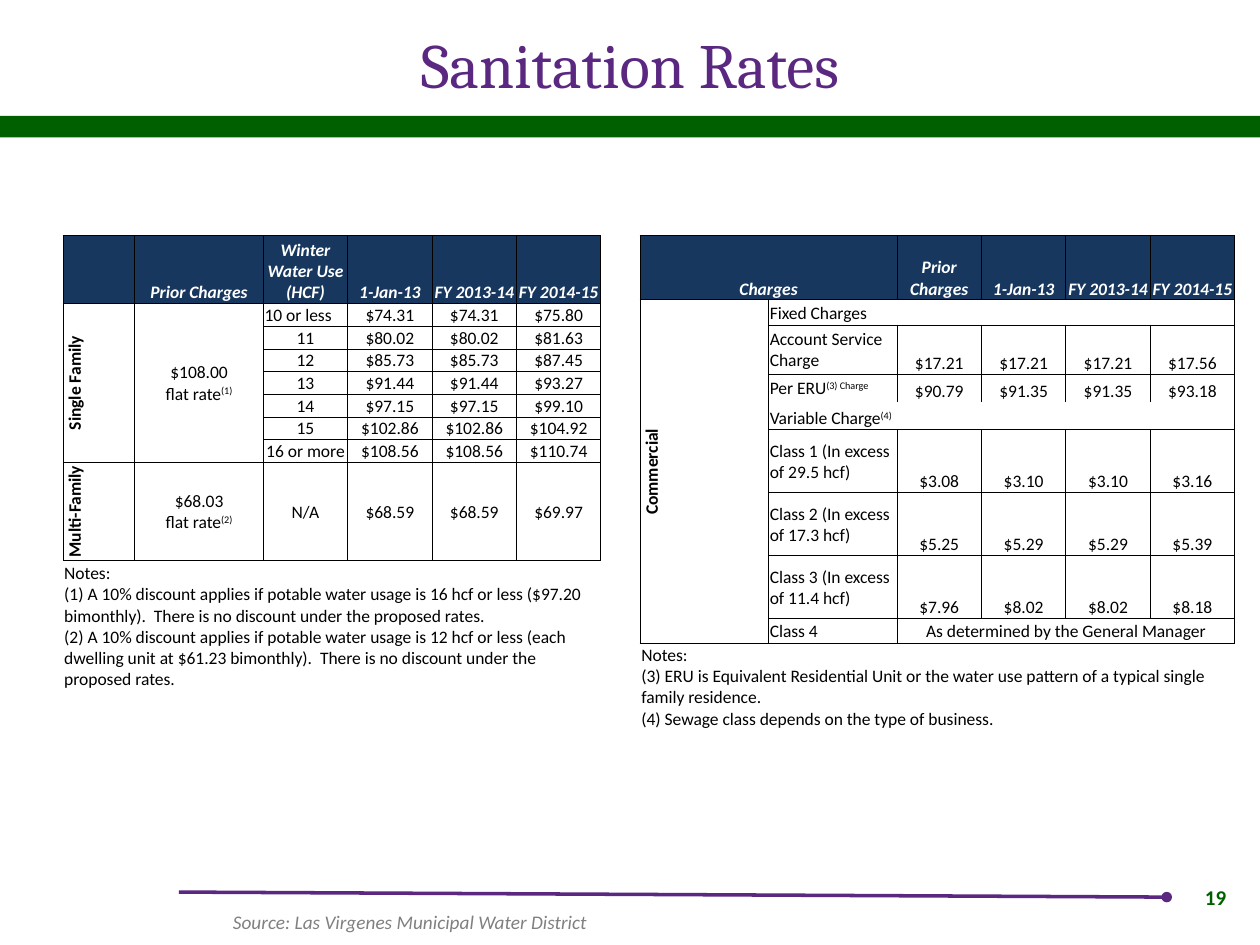
from lxml.etree import SubElement
from pptx import Presentation
from pptx.dml.color import RGBColor
from pptx.enum.shapes import MSO_CONNECTOR as Connector, MSO_SHAPE as Shape
from pptx.enum.text import MSO_ANCHOR as Anchor, PP_ALIGN as Align
from pptx.oxml.ns import qn
from pptx.util import Inches, Pt

COLORS = {"purple": "5A2781", "green": "006000", "navy": "17375E",
          "white": "FFFFFF", "black": "000000", "gray": "808080"}

TITLE = "Sanitation Rates"
SOURCE = "Source: Las Virgenes Municipal Water District"
PAGE = "19"
PERIODS = ["1-Jan-13", "FY 2013-14", "FY 2014-15"]

RESIDENTIAL = {
    "left": 0.5,
    "columns": [0.57, 1.02] + [0.67] * 4,
    "heights": [0.54] + [0.18] * 7 + [0.78, 1.03],
    "rows": [
        ["", "Prior Charges", "Winter Water Use (HCF)", *PERIODS],
        ["Single Family", "$108.00\nflat rate^(1)", "10 or less", "$74.31", "$74.31", "$75.80"],
        ["", "", "11", "$80.02", "$80.02", "$81.63"],
        ["", "", "12", "$85.73", "$85.73", "$87.45"],
        ["", "", "13", "$91.44", "$91.44", "$93.27"],
        ["", "", "14", "$97.15", "$97.15", "$99.10"],
        ["", "", "15", "$102.86", "$102.86", "$104.92"],
        ["", "", "16 or more", "$108.56", "$108.56", "$110.74"],
        ["Multi-Family", "$68.03\nflat rate^(2)", "N/A", "$68.59", "$68.59", "$69.97"],
        ["Notes:\n(1) A 10% discount applies if potable water usage is 16 hcf or less ($97.20 "
         "bimonthly).  There is no discount under the proposed rates.\n"
         "(2) A 10% discount applies if potable water usage is 12 hcf or less (each dwelling "
         "unit at $61.23 bimonthly).  There is no discount under the proposed rates."],
    ],
    "merges": [(1, 0, 7, 0), (1, 1, 7, 1), (9, 0, 9, 5)],
    "left_aligned": [(1, 2), (9, 0)],
    "low": [],
    "open_below": None,
}

COMMERCIAL = {
    "left": 5.08,
    "columns": [1.02] * 2 + [0.67] * 4,
    "heights": [0.51, 0.2, 0.39, 0.22, 0.22] + [0.5] * 3 + [0.2, 0.66],
    "rows": [
        ["Charges", "", "Prior Charges", *PERIODS],
        ["Commercial", "Fixed Charges"],
        ["", "Account Service Charge", "$17.21", "$17.21", "$17.21", "$17.56"],
        ["", "Per ERU^(3) Charge", "$90.79", "$91.35", "$91.35", "$93.18"],
        ["", "Variable Charge^(4)"],
        ["", "Class 1 (In excess of 29.5 hcf)", "$3.08", "$3.10", "$3.10", "$3.16"],
        ["", "Class 2 (In excess of 17.3 hcf)", "$5.25", "$5.29", "$5.29", "$5.39"],
        ["", "Class 3 (In excess of 11.4 hcf)", "$7.96", "$8.02", "$8.02", "$8.18"],
        ["", "Class 4", "As determined by the General Manager"],
        ["Notes:\n(3) ERU is Equivalent Residential Unit or the water use pattern of a typical "
         "single family residence.\n(4) Sewage class depends on the type of business."],
    ],
    "merges": [(0, 0, 0, 1), (1, 0, 8, 0), (1, 1, 1, 5), (4, 1, 4, 5), (8, 2, 8, 5), (9, 0, 9, 5)],
    "left_aligned": [(row, 1) for row in range(1, 9)] + [(9, 0)],
    "low": [(4, 1)],
    "open_below": 3,
}


def rgb(name):
    return RGBColor.from_string(COLORS[name])


def style(paragraph, size, color, align=Align.LEFT, face="Calibri", bold=False, italic=False):
    paragraph.alignment = align
    font = paragraph.font
    font.name, font.size, font.bold, font.italic = face, Pt(size), bold, italic
    font.color.rgb = rgb(color)


def draw_borders(cell, visible):
    properties = cell._tc.get_or_add_tcPr()
    for side in "LRTB":
        line = SubElement(properties, qn(f"a:ln{side}"), w=str(Pt(0.5)))
        if side in visible:
            fill = SubElement(line, qn("a:solidFill"))
            SubElement(fill, qn("a:srgbClr"), val=COLORS["black"])
        else:
            SubElement(line, qn("a:noFill"))


def fill_cell(cell, content, row, column, rates):
    header, notes = row == 0, row == len(rates["rows"]) - 1
    group = column == 0 and not header and not notes
    open_row = rates["open_below"]
    visible = "T" if notes else "LRTB"
    if open_row and column > 0:
        visible = {open_row: "LRT", open_row + 1: "LRB"}.get(row, visible)
    draw_borders(cell, visible)
    if header:
        cell.fill.solid()
        cell.fill.fore_color.rgb = rgb("navy")
    else:
        cell.fill.background()
    cell.margin_left = cell.margin_right = cell.margin_top = Inches(0.01)
    cell.margin_bottom = 0
    centered = not header and not notes and (column < 2 or row == 8)
    low = (row, column) in rates["low"]
    cell.vertical_anchor = Anchor.MIDDLE if centered and not low else Anchor.BOTTOM
    if group:
        cell._tc.get_or_add_tcPr().set("vert", "vert270")

    body, _, superscript = content.partition("^")
    paragraph = cell.text_frame.paragraphs[0]
    paragraph.text = body.replace("\n", "\v")
    if superscript:
        run = paragraph.add_run()
        run.text = superscript
        run._r.get_or_add_rPr().set("baseline", "30000")
    align = Align.LEFT if (row, column) in rates["left_aligned"] else Align.CENTER
    style(paragraph, 10, "white" if header else "black", align,
          bold=header or group, italic=header)


def add_rates(slide, rates):
    columns, heights = rates["columns"], rates["heights"]
    table = slide.shapes.add_table(
        len(heights), len(columns), Inches(rates["left"]), Inches(1.87),
        Inches(sum(columns)), Inches(sum(heights))).table
    table.first_row = table.horz_banding = False
    for column, width in zip(table.columns, columns):
        column.width = Inches(width)
    for row, height in zip(table.rows, heights):
        row.height = Inches(height)
    for top, left, bottom, right in rates["merges"]:
        table.cell(top, left).merge(table.cell(bottom, right))
    for row, contents in enumerate(rates["rows"]):
        padded = contents + [""] * (len(columns) - len(contents))
        for column, content in enumerate(padded):
            fill_cell(table.cell(row, column), content, row, column, rates)


def add_label(slide, content, left, top, width, height, **look):
    frame = slide.shapes.add_textbox(*map(Inches, (left, top, width, height))).text_frame
    frame.word_wrap = True
    frame.vertical_anchor = Anchor.MIDDLE
    frame.text = content
    style(frame.paragraphs[0], **look)


def add_rules(slide):
    band = slide.shapes.add_shape(Shape.RECTANGLE, 0, Inches(0.92), Inches(10), Inches(0.17))
    band.shadow.inherit = False
    band.fill.solid()
    band.fill.fore_color.rgb = rgb("green")
    band.line.fill.background()
    footer_rule = slide.shapes.add_connector(
        Connector.STRAIGHT, Inches(1.42), Inches(7.08), Inches(9.26), Inches(7.12))
    footer_rule.line.color.rgb = rgb("purple")
    footer_rule.line.width = Pt(2)
    SubElement(footer_rule.line._get_or_add_ln(), qn("a:tailEnd"), type="oval")
    SubElement(footer_rule._element.spPr, qn("a:effectLst"))


def main():
    deck = Presentation()
    deck.slide_width, deck.slide_height = Inches(10), Inches(7.5)
    slide = deck.slides.add_slide(deck.slide_layouts[5])
    add_rules(slide)
    title = slide.shapes.title
    title.left, title.top, title.width, title.height = map(Inches, (0.5, 0.17, 9, 0.67))
    title.text_frame.text = TITLE
    title.text_frame.vertical_anchor = Anchor.MIDDLE
    style(title.text_frame.paragraphs[0], 36, "purple", Align.CENTER, "Cambria")
    add_label(slide, PAGE, 9.33, 6.92, 0.5, 0.4, size=12, color="green",
              align=Align.RIGHT, bold=True)
    add_label(slide, SOURCE, 1.75, 7.17, 4.75, 0.29, size=11, color="gray", italic=True)
    for rates in (RESIDENTIAL, COMMERCIAL):
        add_rates(slide, rates)
    deck.save("out.pptx")


if __name__ == "__main__":
    main()
